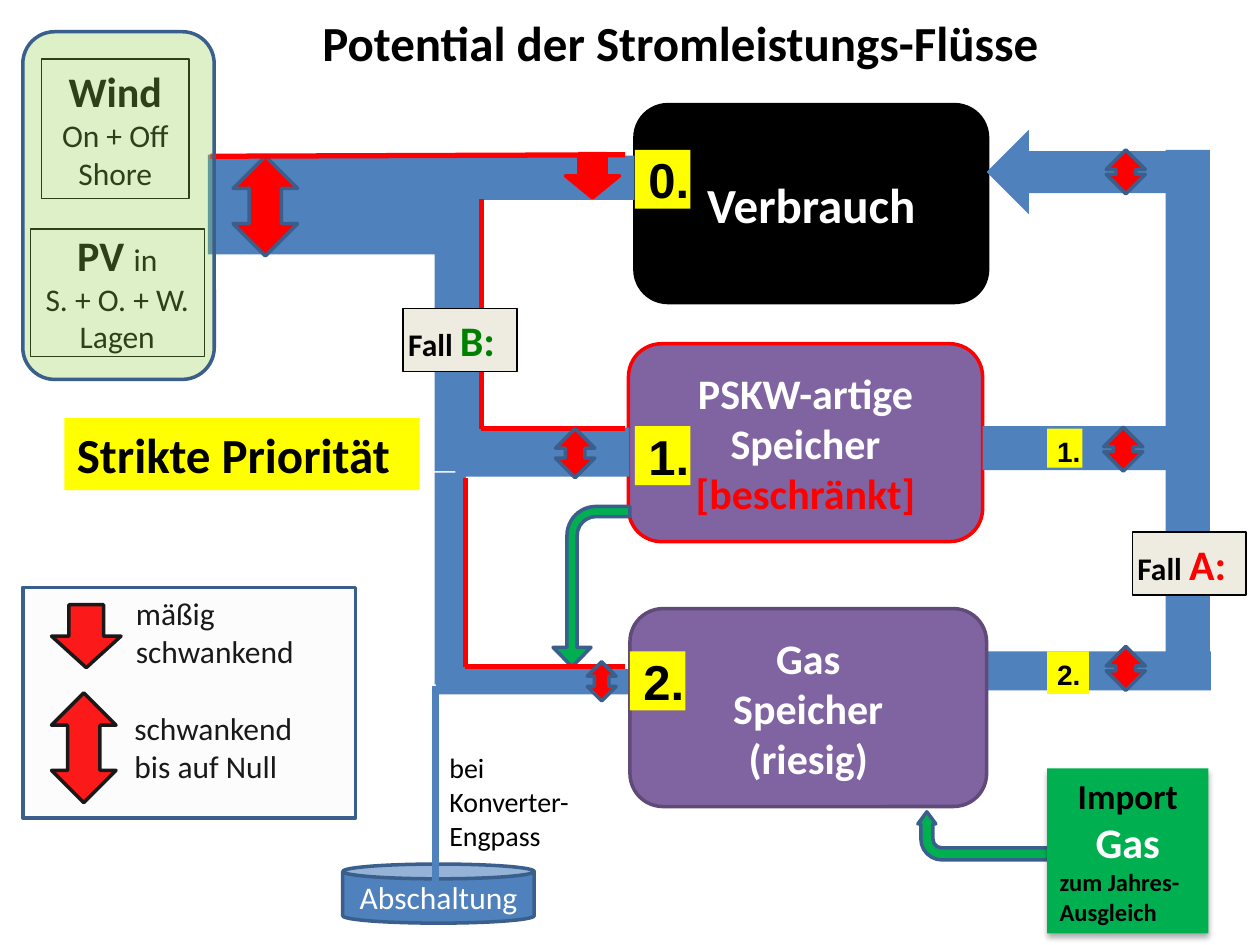
from dataclasses import dataclass

from lxml.etree import SubElement
from pptx import Presentation
from pptx.dml.color import RGBColor
from pptx.enum.shapes import MSO_CONNECTOR as CONN, MSO_SHAPE as SHAPE
from pptx.enum.text import MSO_ANCHOR as ANCHOR, PP_ALIGN as ALIGN
from pptx.oxml.ns import qn
from pptx.util import Cm, Pt


@dataclass(frozen=True)
class Theme:
    flow: str = "4F81BD"
    edge: str = "3A5F8C"
    store: str = "8064A2"
    store_edge: str = "5F4A78"
    red: str = "FF0000"
    yellow: str = "FFFF00"
    gas: str = "00B050"
    case_b: str = "008000"
    case_fill: str = "EEECE1"
    source: str = "92D050"
    legend: str = "EAEAEA"
    black: str = "000000"
    white: str = "FFFFFF"
    body: str = "Calibri"
    label: str = "Arial"
    title: int = 28
    head: int = 24
    sub: int = 20
    text: int = 18
    note: int = 16
    small: int = 14


T = Theme()
INSETS = (0.25, 0.13, 0.25, 0.13)


def rgb(color):
    return RGBColor.from_string(color)


def write(s, *paras, size=T.text, color=T.black, bold=False, font=T.body,
          align=ALIGN.LEFT, anchor=ANCHOR.TOP, insets=INSETS):
    """Each paragraph is a string or a list of (text, overrides) runs."""
    tf = s.text_frame
    tf.word_wrap = True
    tf.vertical_anchor = anchor
    tf.margin_left, tf.margin_top, tf.margin_right, tf.margin_bottom = map(Cm, insets)
    for i, para in enumerate(paras):
        p = tf.add_paragraph() if i else tf.paragraphs[0]
        p.alignment = align
        for text, own in [(para, {})] if isinstance(para, str) else para:
            r = p.add_run()
            r.text = text
            r.font.name = font
            r.font.size = Pt(own.get("size", size))
            r.font.bold = own.get("bold", bold)
            r.font.color.rgb = rgb(own.get("color", color))
            p.alignment = own.get("align", p.alignment)


class Diagram:
    def __init__(self, prs):
        self.shapes = prs.slides.add_slide(prs.slide_layouts[6]).shapes

    def shape(self, kind, x, y, w, h, fill=None, line=None, width=2, alpha=None):
        s = self.shapes.add_shape(kind, Cm(x), Cm(y), Cm(w), Cm(h))
        s.shadow.inherit = False
        if fill:
            s.fill.solid()
            s.fill.fore_color.rgb = rgb(fill)
        else:
            s.fill.background()
        if line:
            s.line.color.rgb = rgb(line)
            s.line.width = Pt(width)
        else:
            s.line.fill.background()
        if alpha:
            clr = s._element.spPr.find(qn("a:solidFill"))[0]
            SubElement(clr, qn("a:alpha")).set("val", str(alpha * 1000))
        return s

    def bar(self, x, y, w, h):
        self.shape(SHAPE.RECTANGLE, x, y, w, h, T.flow)

    def line(self, x1, y1, x2, y2, color=T.red, width=3):
        c = self.shapes.add_connector(CONN.STRAIGHT, Cm(x1), Cm(y1), Cm(x2), Cm(y2))
        c.line.color.rgb = rgb(color)
        c.line.width = Pt(width)
        SubElement(c._element.spPr, qn("a:effectLst"))

    def swing(self, x, y, w=0.79, h=0.89, line=T.edge):
        self.shape(SHAPE.UP_DOWN_ARROW, x, y, w, h, T.red, line)

    def bent(self, x, y, w, h, turn, adj, flip=False):
        s = self.shape(SHAPE.BENT_ARROW, x, y, w, h, T.gas, T.edge)
        s.rotation = turn
        for i, value in enumerate(adj):
            s.adjustments[i] = value
        if flip:
            s._element.spPr.xfrm.set("flipV", "1")

    def block(self, x, y, w, h, fill, line, *paras, size=T.head):
        s = self.shape(SHAPE.ROUNDED_RECTANGLE, x, y, w, h, fill, line)
        write(s, *paras, size=size, color=T.white, bold=True,
              align=ALIGN.CENTER, anchor=ANCHOR.MIDDLE)

    def rank(self, x, y, w, h, text, size=T.title, insets=(0.27, 0, 0, 0)):
        s = self.shape(SHAPE.RECTANGLE, x, y, w, h, T.yellow)
        write(s, text, size=size, font=T.label, bold=True, insets=insets)

    def case(self, x, y, name, color):
        s = self.shape(SHAPE.RECTANGLE, x, y, 2.29, 1.27, T.case_fill, T.black, 1)
        write(s, [("Fall ", {}), (name, {"size": T.head, "color": color})],
              bold=True, insets=(0.1, 0.13, 0.1, 0.13))

    def source(self, x, y, w, h, *paras, insets=INSETS):
        s = self.shape(SHAPE.RECTANGLE, x, y, w, h, None, T.black, 0.75)
        write(s, *paras, align=ALIGN.CENTER, insets=insets)

    def label(self, x, y, w, h, *paras, **fmt):
        write(self.shapes.add_textbox(Cm(x), Cm(y), Cm(w), Cm(h)), *paras, **fmt)


def add_shadow(s):
    fx = s._element.spPr.find(qn("a:effectLst"))
    shadow = SubElement(fx, qn("a:outerShdw"), blurRad=str(Pt(3.5)),
                        dist=str(Pt(2.2)), dir="5400000")
    clr = SubElement(shadow, qn("a:srgbClr"), val=T.black)
    SubElement(clr, qn("a:alpha"), val="32000")


def main():
    prs = Presentation()
    prs.slide_width, prs.slide_height = Cm(25.4), Cm(19.05)
    d = Diagram(prs)
    big = {"size": T.head, "bold": True}

    # Lower bars, consumer and sources
    d.bar(8.79, 13.49, 3.91, 0.51)
    d.bar(19.81, 13.13, 4.6, 0.79)
    d.block(12.8, 2.11, 7.11, 3.99, T.black, T.black, "Verbrauch", size=T.title)
    d.source(0.61, 4.62, 3.51, 2.57, [("PV ", big), ("in", {})],
             "S. + O. + W.", "Lagen", insets=(0, 0, 0, 0))
    d.source(0.84, 1.19, 2.97, 2.82, [("Wind", big)], "On + Off", "Shore")

    # Limited store and the main flow to it
    d.block(12.67, 6.93, 7.14, 3.99, T.store, T.red, "PSKW-artige Speicher",
            [("[beschränkt]", {"color": T.red})])
    d.bar(4.19, 3.12, 5.51, 2.01)
    d.bar(8.76, 5.11, 0.99, 4.39)
    d.bar(9.18, 3.14, 3.61, 0.89)
    d.bar(9.18, 8.62, 3.51, 0.99)
    d.swing(4.7, 3.15, 1.3, 2.01)
    d.line(4.24, 3.15, 12.6, 3.12)
    d.shape(SHAPE.DOWN_ARROW, 11.4, 3.1, 1.09, 0.89, T.red, T.red)

    # Gas store and priority numbers
    d.block(12.7, 12.27, 7.19, 3.99, T.store, T.store_edge, "Gas", "Speicher", "(riesig)")
    for x, y, text in ((12.8, 3.02, "0."), (12.8, 8.59, "1."), (12.7, 13.13, "2.")):
        d.rank(x, y, 1.12, 1.19, text)

    # Branch to the gas store
    d.bar(8.76, 9.53, 0.64, 4.27)
    d.line(9.7, 8.64, 9.7, 4.01)
    d.line(9.7, 8.64, 12.6, 8.64)
    d.shape(SHAPE.ROUNDED_RECTANGLE, 0.46, 0.64, 3.86, 7.01, T.source, T.edge, alpha=31)
    d.swing(11.2, 8.64, h=0.99)

    # Shutdown
    can = d.shape(SHAPE.CAN, 6.91, 17.42, 3.86, 1.19, T.flow, T.edge)
    write(can, "Abschaltung", color=T.white, align=ALIGN.CENTER, anchor=ANCHOR.MIDDLE)
    d.line(8.79, 13.82, 8.79, 17.81, T.flow, 4)
    d.line(8.89, 13.84, 9.8, 13.84, T.flow, 4)

    # Title and transfer between the stores
    d.label(6.25, 0.13, 16.79, 1.45, "Potential der Stromleistungs-Flüsse",
            size=T.title, bold=True)
    d.bent(10.31, 11.05, 3.23, 1.55, 90, (0.132, 0.247, 0.25, 0.378), flip=True)
    d.label(8.81, 15.01, 3.18, 2.31, "bei", "Konverter- Engpass", size=T.note)
    d.line(9.38, 13.44, 9.38, 9.63)
    d.line(9.38, 13.44, 12.6, 13.44)

    # Store output
    d.bar(19.81, 8.59, 4.5, 0.89)
    for y, w, h, text in ((8.64, 0.71, 0.79, "1."), (13.13, 0.84, 0.86, "2.")):
        d.rank(21.11, y, w, h, text, T.note, (0.2, 0.13, 0, 0))
    s = d.shape(SHAPE.RECTANGLE, 1.3, 8.43, 7.16, 1.45, T.yellow)
    write(s, "Strikte Priorität", size=T.title, bold=True)

    # Legend
    d.label(2.46, 14.17, 4.19, 1.98, "schwankend", "bis auf Null")
    d.shape(SHAPE.DOWN_ARROW, 1.04, 12.19, 1.4, 1.27, T.red, T.black)
    d.label(2.49, 11.84, 4.19, 1.98, "mäßig", "schwankend")
    d.swing(1.04, 13.97, 1.3, 2.21, T.black)
    d.shape(SHAPE.RECTANGLE, 0.46, 11.84, 6.71, 4.65, T.legend, T.edge, alpha=11)

    # Gas import
    d.bent(19.48, 15.39, 0.97, 2.92, 270, (0.25, 0.186, 0.25, 0.438))
    s = d.shape(SHAPE.RECTANGLE, 21.11, 15.49, 3.25, 3.33, T.gas)
    add_shadow(s)
    mid = {"align": ALIGN.CENTER}
    write(s, [("Import", mid)], [("Gas", {**mid, "size": T.head, "color": T.white})],
          [("zum Jahres- Ausgleich", {"size": T.small})], size=T.sub, bold=True)

    # Return flow to the consumer
    d.bar(23.5, 3.02, 0.89, 10.8)
    d.shape(SHAPE.LEFT_ARROW, 19.89, 2.62, 3.63, 1.7, T.flow)
    d.swing(11.84, 13.34, 0.58, 0.79)
    for x, y in ((22.25, 8.61), (22.3, 13.03), (22.3, 3.02)):
        d.swing(x, y)
    d.case(22.83, 10.72, "A:", T.red)
    d.case(8.13, 6.22, "B:", T.case_b)

    prs.save("out.pptx")


if __name__ == "__main__":
    main()
